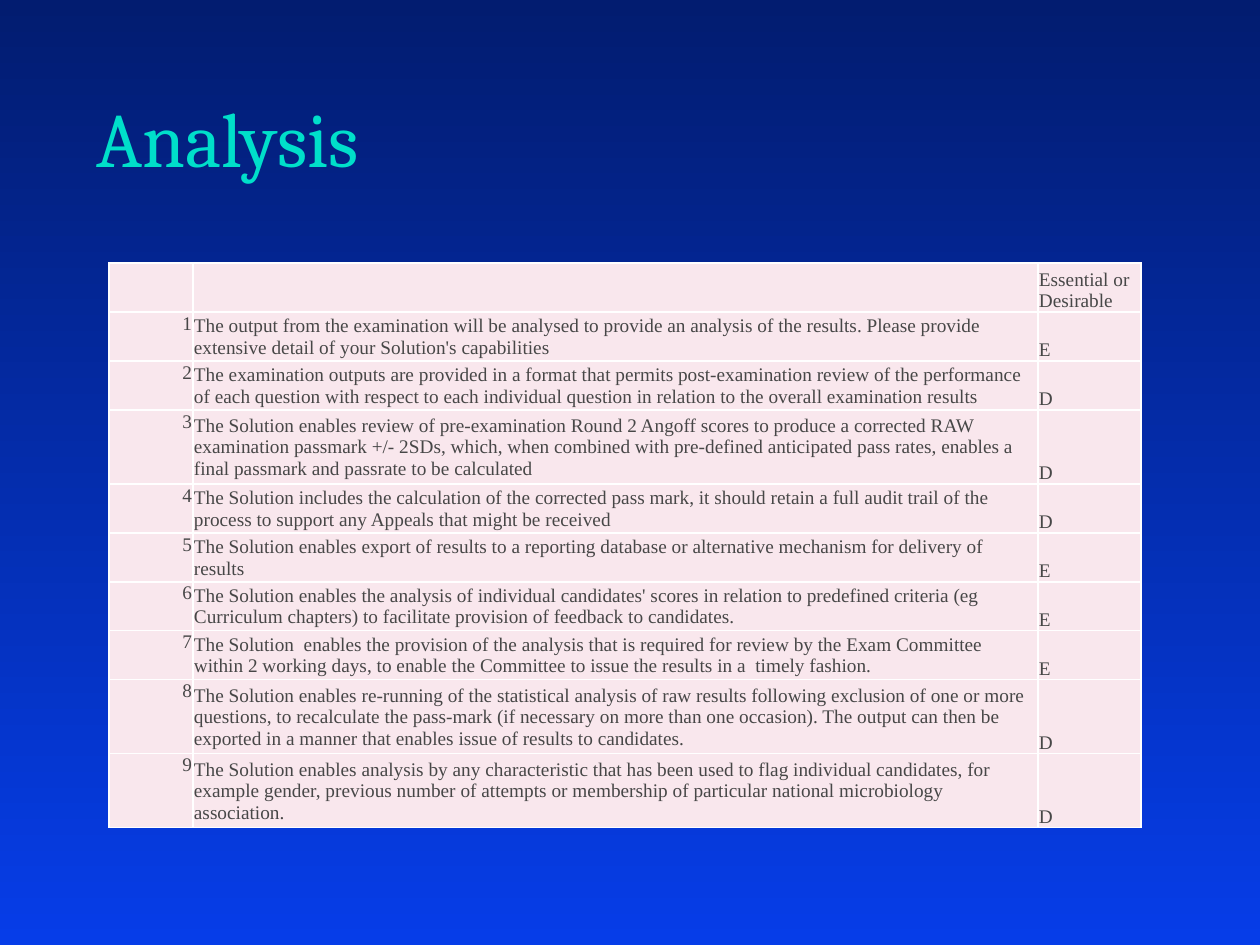
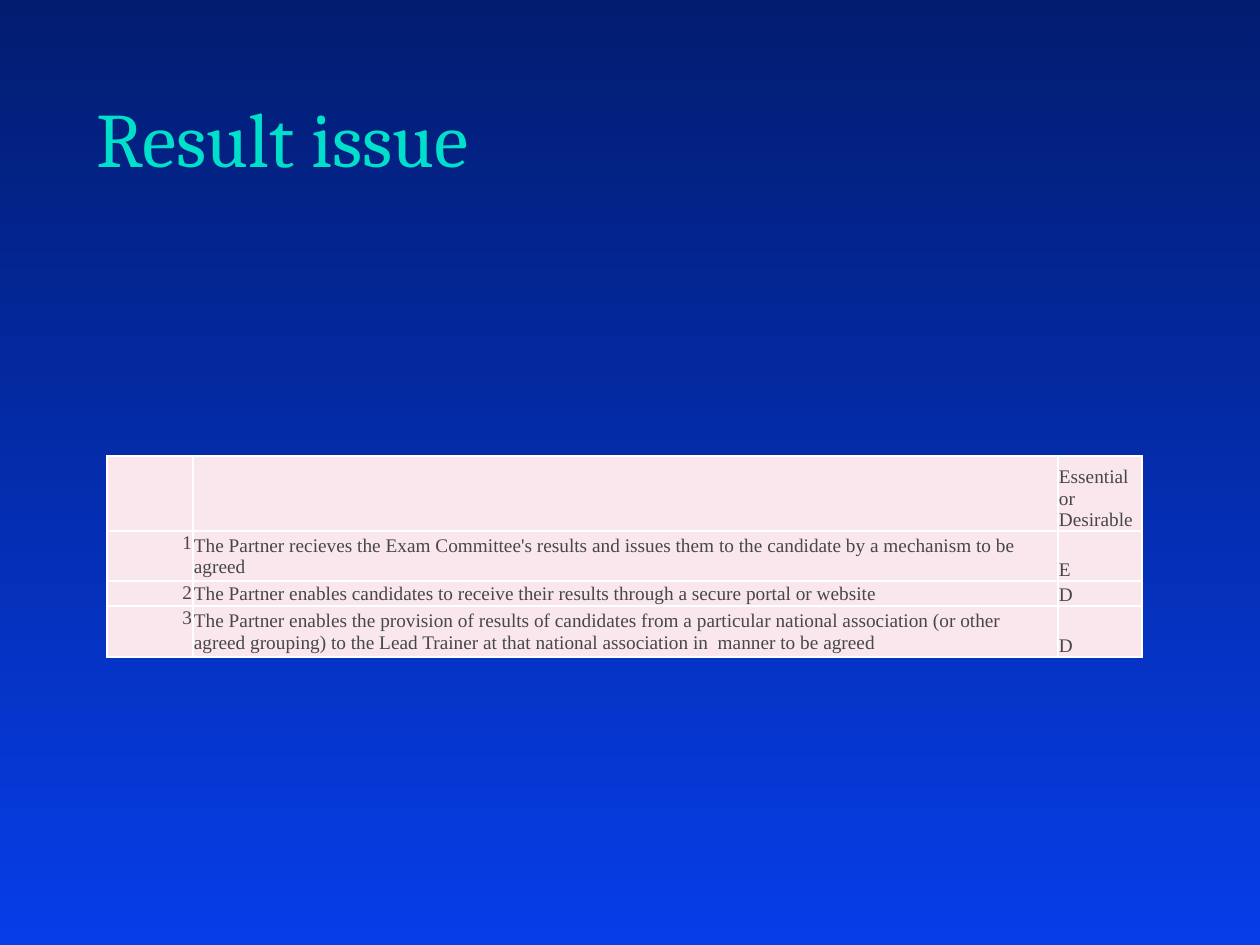
from dataclasses import dataclass

from lxml import etree
from pptx import Presentation
from pptx import util as u
from pptx.dml.color import RGBColor
from pptx.enum import text
from pptx.oxml import ns

# Shared look
SLIDE_WIDTH, SLIDE_HEIGHT = 1260, 945
EMU_PER_PX = 9144000 / SLIDE_WIDTH
BACKGROUND_TOP, BACKGROUND_BOTTOM = "021C70", "063DE8"
TITLE_COLOUR, TEXT_COLOUR = "00DFCA", "474747"
CELL_COLOUR, BORDER_COLOUR = "F9E7ED", "FFFFFF"
TITLE_FONT, TABLE_FONT = "Cambria", "Times New Roman"
TITLE_BOX = (84, 32, 1081, 189 - 32)
RATING_HEADING = "Essential or Desirable"


@dataclass(frozen=True)
class Requirement:
    wording: str
    rating: str
    height: int


@dataclass(frozen=True)
class RequirementSlide:
    title: str
    left: int
    top: int
    columns: tuple[int, int, int]
    header_height: int
    requirements: tuple[Requirement, ...]


@dataclass(frozen=True)
class ColumnStyle:
    anchor: text.MSO_ANCHOR
    alignment: text.PP_ALIGN


COLUMN_STYLES = (
    ColumnStyle(text.MSO_ANCHOR.TOP, text.PP_ALIGN.RIGHT),
    ColumnStyle(text.MSO_ANCHOR.MIDDLE, text.PP_ALIGN.LEFT),
    ColumnStyle(text.MSO_ANCHOR.BOTTOM, text.PP_ALIGN.LEFT),
)

# Content
SLIDES = (
    RequirementSlide("Analysis", 109, 263, (84, 845, 103), 49, (
        Requirement("The output from the examination will be analysed to provide an analysis of the "
                    "results. Please provide extensive detail of your Solution's capabilities", "E", 49),
        Requirement("The examination outputs are provided in a format that permits post-examination "
                    "review of the performance of each question with respect to each individual "
                    "question in relation to the overall examination results", "D", 49),
        Requirement("The Solution enables review of pre-examination Round 2 Angoff scores to produce "
                    "a corrected RAW examination passmark +/- 2SDs, which, when combined with "
                    "pre-defined anticipated pass rates, enables a final passmark and passrate to be "
                    "calculated", "D", 74),
        Requirement("The Solution includes the calculation of the corrected pass mark, it should "
                    "retain a full audit trail of the process to support any Appeals that might be "
                    "received", "D", 49),
        Requirement("The Solution enables export of results to a reporting database or alternative "
                    "mechanism for delivery of results", "E", 49),
        Requirement("The Solution enables the analysis of individual candidates' scores in relation "
                    "to predefined criteria (eg Curriculum chapters) to facilitate provision of "
                    "feedback to candidates.", "E", 49),
        Requirement("The Solution  enables the provision of the analysis that is required for review "
                    "by the Exam Committee within 2 working days, to enable the Committee to issue "
                    "the results in a  timely fashion.", "E", 49),
        Requirement("The Solution enables re-running of the statistical analysis of raw results "
                    "following exclusion of one or more questions, to recalculate the pass-mark (if "
                    "necessary on more than one occasion). The output can then be exported in a "
                    "manner that enables issue of results to candidates.", "D", 74),
        Requirement("The Solution enables analysis by any characteristic that has been used to flag "
                    "individual candidates, for example gender, previous number of attempts or "
                    "membership of particular national microbiology association.", "D", 74),
    )),
    RequirementSlide("Result issue", 107, 456, (86, 865, 84), 75, (
        Requirement("The Partner recieves the Exam Committee's results and issues them to the "
                    "candidate by a mechanism to be agreed", "E", 50),
        Requirement("The Partner enables candidates to receive their results through a secure portal "
                    "or website", "D", 25),
        Requirement("The Partner enables the provision of results of candidates from a particular "
                    "national association (or other agreed grouping) to the Lead Trainer at that "
                    "national association in  manner to be agreed", "D", 51),
    )),
)


def px(length: int) -> u.Emu:
    return u.Emu(round(length * EMU_PER_PX))


def colour(value: str) -> RGBColor:
    return RGBColor.from_string(value)


def add_run(paragraph, wording: str, font: str, size: int, ink: str) -> None:
    run = paragraph.add_run()
    run.text = wording
    run.font.name = font
    run.font.size = u.Pt(size)
    run.font.color.rgb = colour(ink)


def paint_background(slide) -> None:
    fill = slide.background.fill
    fill.gradient()
    fill.gradient_angle = 270
    for stop, shade in zip(fill.gradient_stops, (BACKGROUND_TOP, BACKGROUND_BOTTOM)):
        stop.color.rgb = colour(shade)


def add_title(slide, wording: str) -> None:
    frame = slide.shapes.add_textbox(*map(px, TITLE_BOX)).text_frame
    frame.word_wrap = True
    frame.vertical_anchor = text.MSO_ANCHOR.BOTTOM
    add_run(frame.paragraphs[0], wording, TITLE_FONT, 44, TITLE_COLOUR)


def add_borders(cell) -> None:
    properties = cell._tc.get_or_add_tcPr()
    for side in ("lnL", "lnR", "lnT", "lnB"):
        line = etree.SubElement(properties, ns.qn(f"a:{side}"), w=str(u.Pt(1)))
        fill = etree.SubElement(line, ns.qn("a:solidFill"))
        etree.SubElement(fill, ns.qn("a:srgbClr"), val=BORDER_COLOUR)


def fill_cell(cell, wording: str, style: ColumnStyle) -> None:
    add_borders(cell)
    cell.fill.solid()
    cell.fill.fore_color.rgb = colour(CELL_COLOUR)
    cell.margin_left = cell.margin_right = cell.margin_top = px(1)
    cell.margin_bottom = 0
    cell.vertical_anchor = style.anchor
    if wording:
        paragraph = cell.text_frame.paragraphs[0]
        paragraph.alignment = style.alignment
        add_run(paragraph, wording, TABLE_FONT, 11, TEXT_COLOUR)


def add_requirements(slide, content: RequirementSlide) -> None:
    rows = [("", "", RATING_HEADING)]
    rows += [(str(number), item.wording, item.rating)
             for number, item in enumerate(content.requirements, start=1)]
    heights = [content.header_height] + [item.height for item in content.requirements]
    table = slide.shapes.add_table(
        len(rows), len(content.columns), px(content.left), px(content.top),
        px(sum(content.columns)), px(sum(heights))).table
    table.first_row = table.horz_banding = False
    for column, width in zip(table.columns, content.columns):
        column.width = px(width)
    for row, height, wordings in zip(table.rows, heights, rows):
        row.height = px(height)
        for cell, wording, style in zip(row.cells, wordings, COLUMN_STYLES):
            fill_cell(cell, wording, style)


def main() -> None:
    presentation = Presentation()
    presentation.slide_width = px(SLIDE_WIDTH)
    presentation.slide_height = px(SLIDE_HEIGHT)
    for content in SLIDES:
        slide = presentation.slides.add_slide(presentation.slide_layouts[6])
        paint_background(slide)
        add_title(slide, content.title)
        add_requirements(slide, content)
    presentation.save("out.pptx")


if __name__ == "__main__":
    main()
